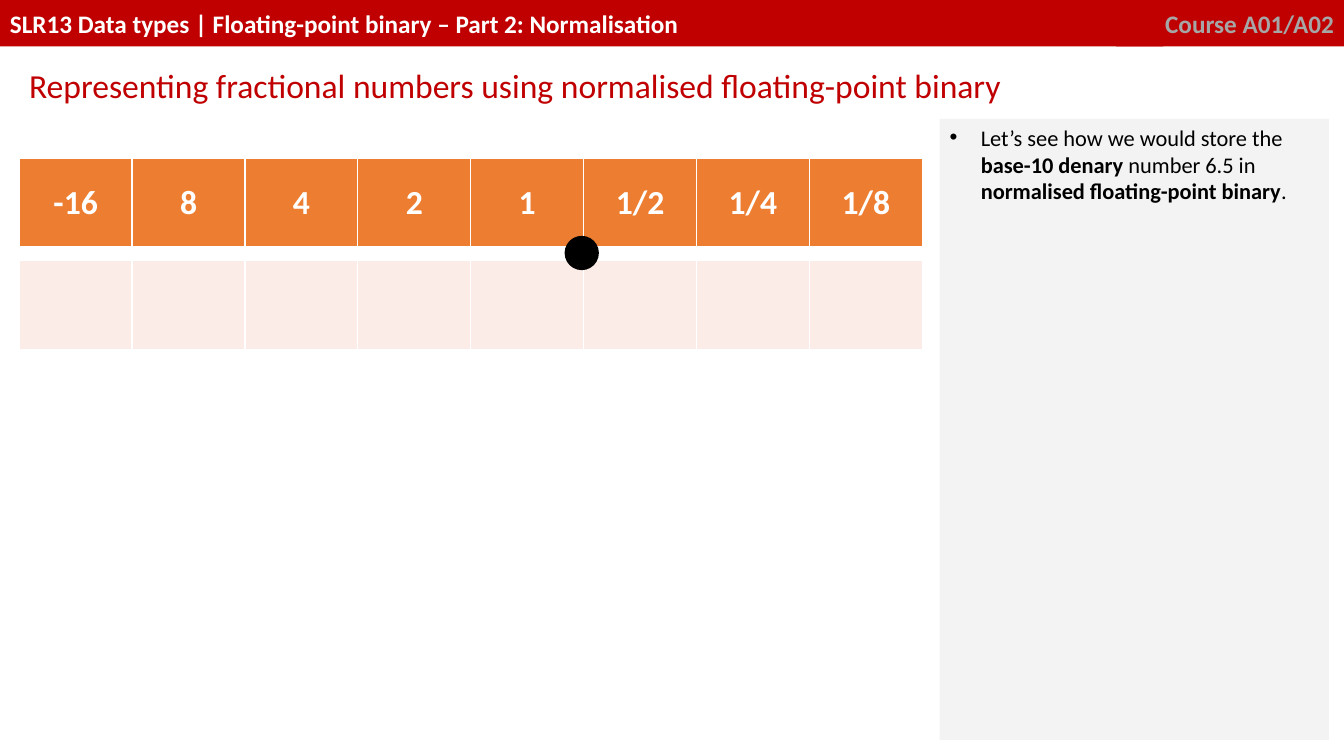
import dataclasses
import typing

import lxml.etree
import pptx
import pptx.dml.color
import pptx.enum.shapes
import pptx.enum.text
import pptx.oxml
import pptx.oxml.ns
import pptx.util

Inches = pptx.util.Inches
Align = pptx.enum.text.PP_ALIGN
Anchor = pptx.enum.text.MSO_ANCHOR
Shapes = pptx.enum.shapes.MSO_SHAPE
qn = pptx.oxml.ns.qn


@dataclasses.dataclass(frozen=True)
class Theme:
    font: str = "Calibri"
    red: str = "C00000"
    white: str = "FFFFFF"
    black: str = "000000"
    grey: str = "A6A6A6"
    panel: str = "F2F2F2"
    orange: str = "ED7D31"
    blush: str = "FCECE8"
    header_size: int = 18
    title_size: int = 24
    note_size: int = 16
    digit_size: int = 24
    gap_size: int = 1


@dataclasses.dataclass(frozen=True)
class Box:
    left: float
    top: float
    width: float
    height: float
    fill: str
    opacity: int = 100
    preset: Shapes = Shapes.RECTANGLE
    text: str = ""
    text_format: dict[str, typing.Any] = dataclasses.field(default_factory=dict)


THEME = Theme()
PLACE_VALUES = ["-16", "8", "4", "2", "1", "1/2", "1/4", "1/8"]
COLUMN_WIDTH = 1.12
ROW_HEIGHTS = [0.89, 0.12, 0.89]
ROW_FILLS = [THEME.orange, THEME.white, THEME.blush]

BOXES = [
    Box(11.07, 0, 2.26, 0.46, THEME.red, text="Course A01/A02",
        text_format=dict(size=THEME.header_size, color=THEME.grey, bold=True,
                         align=Align.RIGHT, anchor=Anchor.MIDDLE)),
    Box(0, 0, 11.54, 0.46, THEME.red,
        text="SLR13 Data types | Floating-point binary – Part 2: Normalisation",
        text_format=dict(size=THEME.header_size, color=THEME.white, bold=True,
                         anchor=Anchor.MIDDLE)),
    Box(9.32, 1.18, 3.86, 6.16, THEME.panel, 90,
        text="Let’s see how we would store the **base-10 denary** number 6.5 in "
             "**normalised floating-point binary**.",
        text_format=dict(size=THEME.note_size, color=THEME.black, bullet="•")),
    Box(0.19, 0.57, 10.08, 0.51, THEME.white, 70,
        text="Representing fractional numbers using normalised floating-point binary",
        text_format=dict(size=THEME.title_size, color=THEME.red,
                         line_spacing=1.07, space_after=8)),
]
BINARY_POINT = Box(5.6, 2.34, 0.34, 0.34, THEME.black, preset=Shapes.OVAL)


def rgb(color: str) -> pptx.dml.color.RGBColor:
    return pptx.dml.color.RGBColor.from_string(color)


def write_text(frame: typing.Any, text: str, *, size: int, color: str, bold: bool = False,
               align: Align = Align.LEFT, anchor: Anchor = Anchor.TOP, bullet: str = "",
               line_spacing: float = 1.0, space_after: int = 0) -> None:
    frame.word_wrap = True
    frame.vertical_anchor = anchor
    paragraph = frame.paragraphs[0]
    paragraph.alignment = align
    paragraph.line_spacing = line_spacing
    paragraph.space_after = pptx.util.Pt(space_after)
    for index, part in enumerate(text.split("**")):
        run = paragraph.add_run()
        run.text = part
        run.font.name = THEME.font
        run.font.size = pptx.util.Pt(size)
        run.font.bold = bold or index % 2 == 1
        run.font.color.rgb = rgb(color)
    if bullet:
        properties = paragraph._p.get_or_add_pPr()
        properties.set("marL", str(Inches(0.31)))
        properties.set("indent", str(Inches(-0.31)))
        bullet_color = lxml.etree.SubElement(properties, qn("a:buClr"))
        lxml.etree.SubElement(bullet_color, qn("a:srgbClr"), val=color)
        lxml.etree.SubElement(properties, qn("a:buFont"), typeface="Arial")
        lxml.etree.SubElement(properties, qn("a:buChar"), char=bullet)


def draw_box(slide: typing.Any, box: Box) -> None:
    shape = slide.shapes.add_shape(box.preset, Inches(box.left), Inches(box.top),
                                   Inches(box.width), Inches(box.height))
    shape.shadow.inherit = False
    shape.line.fill.background()
    shape.fill.solid()
    shape.fill.fore_color.rgb = rgb(box.fill)
    if box.opacity < 100:
        fill_color = shape._element.spPr.find(qn("a:solidFill"))[0]
        lxml.etree.SubElement(fill_color, qn("a:alpha"), val=str(box.opacity * 1000))
    if box.text:
        write_text(shape.text_frame, box.text, **box.text_format)


def style_cell(cell: typing.Any, fill: str, bottom_width: int) -> None:
    properties = cell._tc.get_or_add_tcPr()
    for side in ("lnL", "lnR", "lnT", "lnB"):
        width = pptx.util.Pt(bottom_width if side == "lnB" else 1)
        border = lxml.etree.SubElement(properties, qn(f"a:{side}"), w=str(width))
        solid = lxml.etree.SubElement(border, qn("a:solidFill"))
        lxml.etree.SubElement(solid, qn("a:srgbClr"), val=THEME.white)
    cell.fill.solid()
    cell.fill.fore_color.rgb = rgb(fill)


def draw_place_value_table(slide: typing.Any) -> None:
    table = slide.shapes.add_table(
        len(ROW_HEIGHTS), len(PLACE_VALUES), Inches(0.19), Inches(1.57),
        Inches(COLUMN_WIDTH * len(PLACE_VALUES)), Inches(sum(ROW_HEIGHTS))).table
    table.horz_banding = False
    for column in table.columns:
        column.width = Inches(COLUMN_WIDTH)
    for row_index, (row, height, fill) in enumerate(zip(table.rows, ROW_HEIGHTS, ROW_FILLS)):
        row.height = Inches(height)
        for cell in row.cells:
            style_cell(cell, fill, bottom_width=3 if row_index == 0 else 1)
    for cell, value in zip(table.rows[0].cells, PLACE_VALUES):
        write_text(cell.text_frame, value, size=THEME.digit_size, color=THEME.white,
                   bold=True, align=Align.CENTER)
        cell.vertical_anchor = Anchor.MIDDLE
    for cell in table.rows[1].cells:
        cell.margin_top = cell.margin_bottom = 0
        lxml.etree.SubElement(cell.text_frame.paragraphs[0]._p, qn("a:endParaRPr"),
                              sz=str(THEME.gap_size * 100))
    table.cell(1, 0).merge(table.cell(1, len(PLACE_VALUES) - 1))


def main() -> None:
    presentation = pptx.Presentation()
    presentation.slide_width = Inches(13.33)
    presentation.slide_height = Inches(7.5)
    slide = presentation.slides.add_slide(presentation.slide_layouts[6])
    for box in BOXES:
        draw_box(slide, box)
    draw_place_value_table(slide)
    draw_box(slide, BINARY_POINT)
    presentation.save("out.pptx")


if __name__ == "__main__":
    main()
